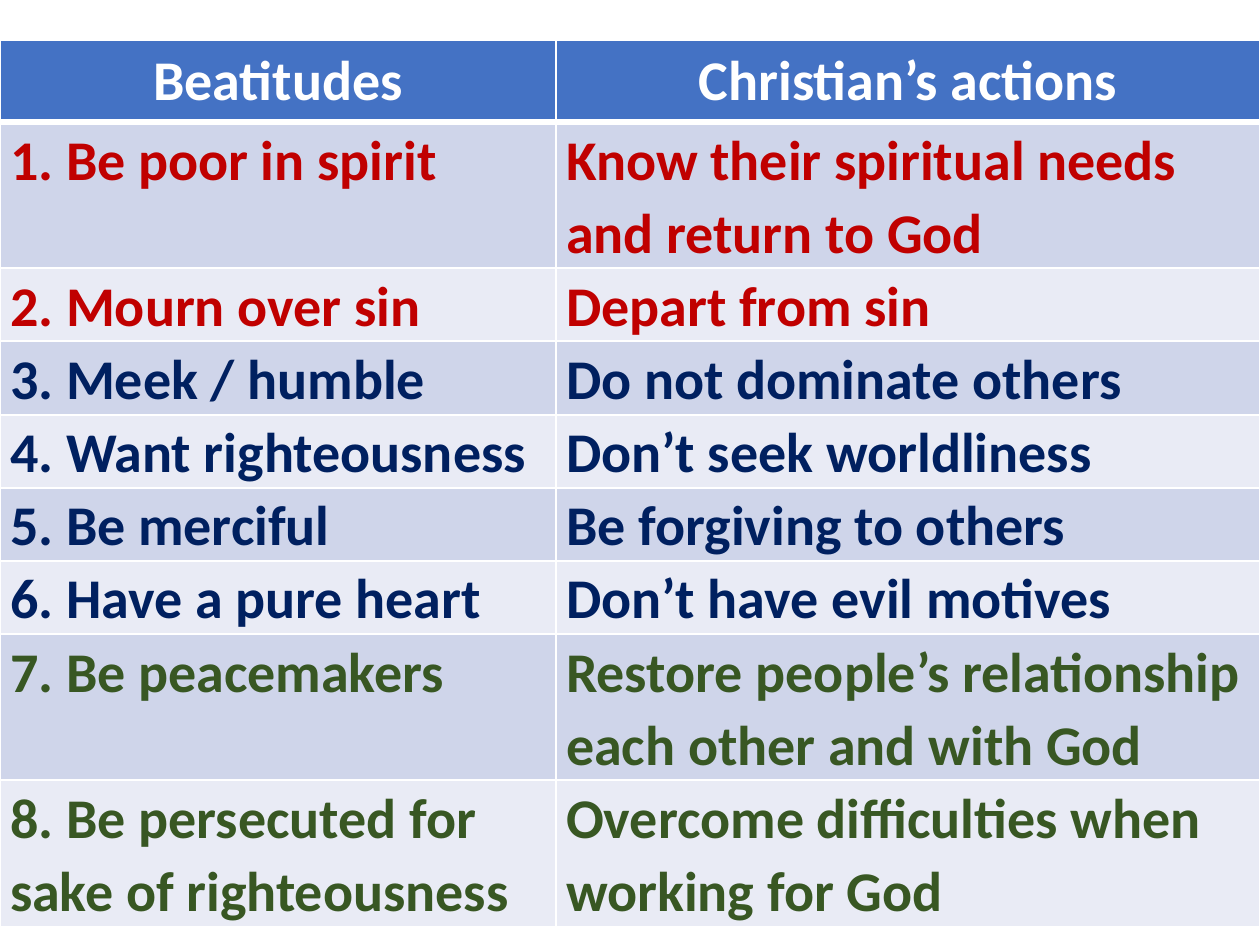
from dataclasses import dataclass

from lxml import etree
from pptx import Presentation
from pptx import util as u
from pptx.dml.color import RGBColor
from pptx.enum import text
from pptx.oxml import ns


@dataclass(frozen=True)
class Theme:
    font: str = "Calibri"
    size: int = 24
    white: str = "FFFFFF"
    head: str = "4472C4"
    bands: tuple = ("CFD5EA", "E9EBF5")
    red: str = "C00000"
    navy: str = "002060"
    green: str = "385723"
    thin: int = 1
    thick: int = 3


THEME = Theme()

HEADS = ("Beatitudes", "Christian’s actions")
ROWS = (
    ("1. Be poor in spirit", "Know their spiritual needs and return to God", THEME.red),
    ("2. Mourn over sin", "Depart from sin", THEME.red),
    ("3. Meek / humble", "Do not dominate others", THEME.navy),
    ("4. Want righteousness", "Don’t seek worldliness", THEME.navy),
    ("5. Be merciful", "Be forgiving to others", THEME.navy),
    ("6. Have a pure heart", "Don’t have evil motives", THEME.navy),
    ("7. Be peacemakers", "Restore people’s relationship each other and with God", THEME.green),
    ("8. Be persecuted for sake of righteousness", "Overcome difficulties when working for God", THEME.green),
)


def set_edges(cell, top, bottom):
    props = cell._tc.get_or_add_tcPr()
    widths = {"a:lnL": THEME.thin, "a:lnR": THEME.thin, "a:lnT": top, "a:lnB": bottom}
    for spot, (tag, width) in enumerate(widths.items()):
        line = etree.Element(ns.qn(tag), w=str(u.Pt(width)))
        fill = etree.SubElement(line, ns.qn("a:solidFill"))
        etree.SubElement(fill, ns.qn("a:srgbClr"), val=THEME.white)
        props.insert(spot, line)


def set_cell(cell, words, ink, fill, side, edge):
    cell.fill.solid()
    cell.fill.fore_color.rgb = RGBColor.from_string(fill)
    cell.margin_left = cell.margin_right = u.Inches(side)
    cell.margin_top = cell.margin_bottom = u.Inches(edge)
    cell.text = words
    para = cell.text_frame.paragraphs[0]
    para.font.name = THEME.font
    para.font.size = u.Pt(THEME.size)
    para.font.bold = True
    para.font.color.rgb = RGBColor.from_string(ink)
    return para


def add_grid(slide, left, top, width, height):
    grid = slide.shapes.add_table(len(ROWS) + 1, len(HEADS), left, top, width, height).table
    grid.first_row = grid.horz_banding = False
    grid.columns[0].width = u.Inches(3.31)
    grid.columns[1].width = width - grid.columns[0].width
    for row in grid.rows:
        row.height = u.Inches(0.43)
    grid.rows[0].height = u.Inches(0.47)

    for col, words in enumerate(HEADS):
        cell = grid.cell(0, col)
        para = set_cell(cell, words, THEME.white, THEME.head, 0.07, 0.04)
        para.alignment = text.PP_ALIGN.CENTER
        set_edges(cell, THEME.thin, THEME.thick)

    for row, (*pair, ink) in enumerate(ROWS, 1):
        for col, words in enumerate(pair):
            cell = grid.cell(row, col)
            para = set_cell(cell, words, ink, THEME.bands[(row - 1) % 2], 0.06, 0)
            para.line_spacing = 1.07
            set_edges(cell, THEME.thick if row == 1 else THEME.thin, THEME.thin)


def main():
    deck = Presentation()
    deck.slide_width = u.Inches(7.5)
    deck.slide_height = deck.slide_width * 3 // 4
    slide = deck.slides.add_slide(deck.slide_layouts[6])
    add_grid(slide, 0, u.Inches(0.24), deck.slide_width, u.Inches(3.91))
    deck.save("out.pptx")


if __name__ == "__main__":
    main()
